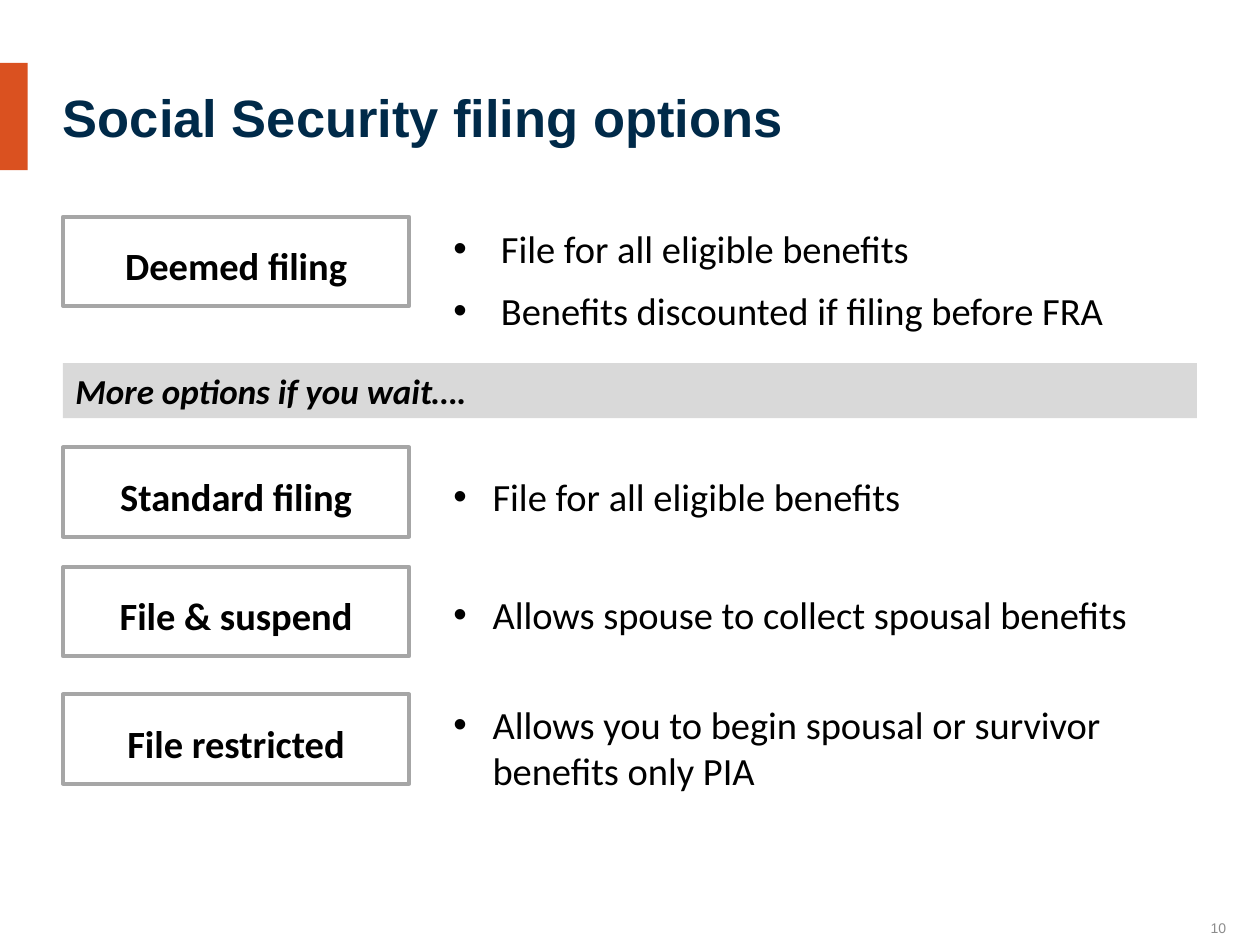
from dataclasses import dataclass
from typing import NamedTuple

from lxml import etree
from pptx import Presentation
from pptx.dml.color import RGBColor
from pptx.enum.shapes import MSO_SHAPE
from pptx.enum.text import MSO_ANCHOR, MSO_AUTO_SIZE, PP_ALIGN
from pptx.oxml.ns import qn
from pptx.util import Cm, Pt

RECTANGLE = MSO_SHAPE.RECTANGLE
TOP, MIDDLE, BOTTOM = MSO_ANCHOR.TOP, MSO_ANCHOR.MIDDLE, MSO_ANCHOR.BOTTOM
LEFT, CENTER, RIGHT = PP_ALIGN.LEFT, PP_ALIGN.CENTER, PP_ALIGN.RIGHT
FIT_SHAPE = MSO_AUTO_SIZE.SHAPE_TO_FIT_TEXT


@dataclass(frozen=True)
class Theme:
    heading_font: str = "Arial"
    body_font: str = "Calibri"
    accent: str = "DA5120"
    navy: str = "002A49"
    ink: str = "000000"
    outline: str = "A6A6A6"
    band: str = "D9D9D9"
    muted: str = "8C8C8C"
    title_size: int = 30
    body_size: int = 22
    band_size: int = 20
    number_size: int = 8


class Box(NamedTuple):
    left: float
    top: float
    width: float
    height: float

    def inner(self, left, top, width, height):
        return Box(self.left + left, self.top + top, width, height)

    def lengths(self):
        return [Cm(value) for value in self]


class Option(NamedTuple):
    label: str
    bullets: list
    top: float
    list_offset: float
    list_width: float
    list_height: float
    indent: float = 0.79
    space_after: int = 12
    wrap: bool = True


THEME = Theme()
CONTENT = Box(1.27, 4.37, 22.86, 11.76)
LABEL_WIDTH, LABEL_HEIGHT = 6.98, 1.8
LIST_LEFT = 7.62
TITLE_FORMAT = {"name": THEME.heading_font, "size": Pt(THEME.title_size), "bold": True}
NUMBER_FORMAT = {"name": THEME.heading_font, "size": Pt(THEME.number_size)}
BODY_FORMAT = {"name": THEME.body_font, "size": Pt(THEME.body_size)}
LABEL_FORMAT = {**BODY_FORMAT, "bold": True}
BAND_FORMAT = {**LABEL_FORMAT, "size": Pt(THEME.band_size), "italic": True}
OPTIONS = [
    Option("Deemed filing",
           ["File for all eligible benefits", "Benefits discounted if filing before FRA"],
           0, 0.05, 15.82, 2.46, indent=0.96, space_after=9),
    Option("Standard filing", ["File for all eligible benefits"],
           4.65, 0.4, 10.31, 1.19, wrap=False),
    Option("File & suspend", ["Allows spouse to collect spousal benefits"],
           7.06, 0.36, 15.47, 1.19, wrap=False),
    Option("File restricted", ["Allows you to begin spousal or survivor benefits only PIA"],
           9.63, 0, 15.24, 2.13, space_after=0),
]


def set_values(target, values):
    for name, value in values.items():
        setattr(target, name, value)


def add_rectangle(slide, box, fill=None, line=None):
    shape = slide.shapes.add_shape(RECTANGLE, *box.lengths())
    shape.shadow.inherit = False
    if fill:
        shape.fill.solid()
        shape.fill.fore_color.rgb = RGBColor.from_string(fill)
    else:
        shape.fill.background()
    if line:
        shape.line.color.rgb = RGBColor.from_string(line)
        shape.line.width = Pt(2.25)
    else:
        shape.line.fill.background()
    return shape


def add_bullet(paragraph, indent):
    properties = paragraph._p.get_or_add_pPr()
    properties.set("marL", str(Cm(indent)))
    properties.set("indent", str(-Cm(indent)))
    etree.SubElement(properties, qn("a:buFont")).set("typeface", "Arial")
    etree.SubElement(properties, qn("a:buChar")).set("char", "•")


def write_text(shape, lines, font_format, color=THEME.ink, align=LEFT, anchor=TOP,
               margin=None, indent=None, space_after=0, wrap=True, fit=False):
    frame = shape.text_frame
    frame.text = "\n".join(lines)
    set_values(frame, {"word_wrap": wrap, "vertical_anchor": anchor})
    if fit:
        frame.auto_size = FIT_SHAPE
    if margin is not None:
        sides = ("left", "top", "right", "bottom")
        set_values(frame, {f"margin_{side}": Cm(margin) for side in sides})
    for paragraph in frame.paragraphs:
        if indent:
            add_bullet(paragraph, indent)
        set_values(paragraph, {"alignment": align, "space_after": Pt(space_after)})
        for run in paragraph.runs:
            set_values(run.font, font_format)
            run.font.color.rgb = RGBColor.from_string(color)


def add_header(slide, box, title):
    add_rectangle(slide, box.inner(0, 0.51, 0.56, 2.16), fill=THEME.accent)
    heading = slide.shapes.add_textbox(*box.inner(1.27, 0, 22.86, box.height).lengths())
    write_text(heading, [title], TITLE_FORMAT, THEME.navy, anchor=MIDDLE, margin=0)


def add_option(slide, box, option):
    label = add_rectangle(slide, box.inner(0, 0, LABEL_WIDTH, LABEL_HEIGHT), line=THEME.outline)
    write_text(label, [option.label], LABEL_FORMAT, align=CENTER, margin=0.51, space_after=12)
    list_box = box.inner(LIST_LEFT, option.list_offset, option.list_width, option.list_height)
    bullets = slide.shapes.add_textbox(*list_box.lengths())
    write_text(bullets, option.bullets, BODY_FORMAT, indent=option.indent,
               space_after=option.space_after, wrap=option.wrap, fit=True)


def add_band(slide, box, text):
    band = add_rectangle(slide, box, fill=THEME.band)
    write_text(band, [text], BAND_FORMAT, fit=True)


def add_page_number(slide, box, number):
    text_box = slide.shapes.add_textbox(*box.lengths())
    write_text(text_box, [number], NUMBER_FORMAT, THEME.muted, RIGHT, BOTTOM, margin=0)


def main():
    presentation = Presentation()
    set_values(presentation, {"slide_width": Cm(25.4), "slide_height": Cm(19.05)})
    slide = presentation.slides.add_slide(presentation.slide_layouts[6])
    add_header(slide, Box(0, 0.76, 25.4, 3.18), "Social Security filing options")
    for option in OPTIONS:
        add_option(slide, CONTENT.inner(0, option.top, CONTENT.width, LABEL_HEIGHT), option)
    add_band(slide, CONTENT.inner(0, 2.95, CONTENT.width, 1.11), "More options if you wait….")
    add_page_number(slide, Box(18.8, 17.86, 5.92, 1.02), "10")
    presentation.save("out.pptx")


if __name__ == "__main__":
    main()
